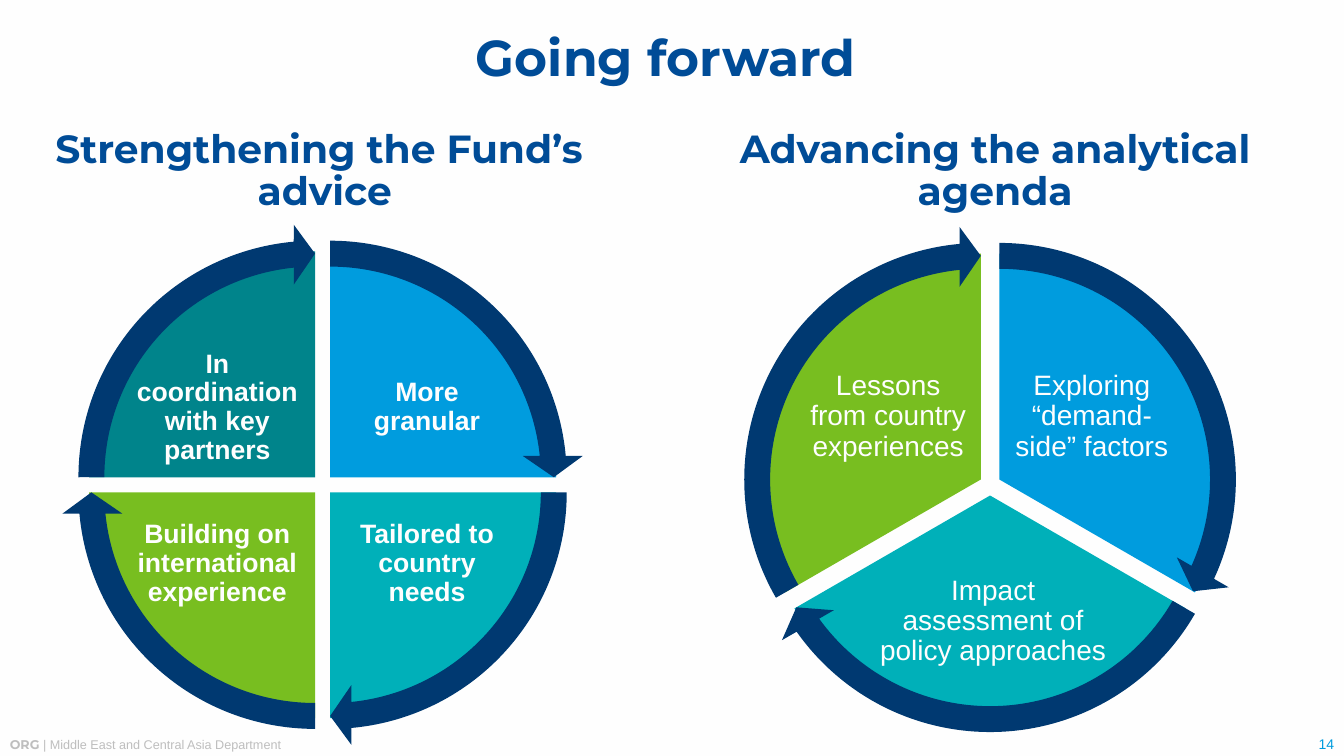
"""Build the 'Going forward' slide with two segmented cycle wheels."""
import math
from dataclasses import dataclass

import pptx
import pptx.dml.color
import pptx.enum.shapes
import pptx.enum.text
import pptx.shapes.autoshape
import pptx.shapes.shapetree
import pptx.slide
import pptx.text.text
import pptx.util

Inches = pptx.util.Inches
RGBColor = pptx.dml.color.RGBColor
Preset = pptx.enum.shapes.MSO_SHAPE
Align = pptx.enum.text.PP_ALIGN
Anchor = pptx.enum.text.MSO_ANCHOR

WHITE = RGBColor(0xFE, 0xFE, 0xFE)
NAVY = RGBColor(0x00, 0x39, 0x71)
HEADING_BLUE = RGBColor(0x00, 0x4C, 0x97)
SKY = RGBColor(0x00, 0x9C, 0xDE)
TURQUOISE = RGBColor(0x00, 0xB0, 0xB9)
GREEN = RGBColor(0x78, 0xBE, 0x20)
TEAL = RGBColor(0x00, 0x84, 0x8B)
GREY = RGBColor(0xBE, 0xBE, 0xBE)

PIE_SIZE = 4.48
ARROW_SIZE = 5.03
SEGMENT_OFFSET = 0.106
UNITS_PER_DEGREE = 0.6
ARROWHEAD_ANGLE = 3.275
LABEL_INSET = 0.01


@dataclass(frozen=True)
class Box:
    left: float
    top: float
    width: float
    height: float

    def lengths(self) -> list[pptx.util.Length]:
        return [Inches(v) for v in (self.left, self.top, self.width, self.height)]


@dataclass(frozen=True)
class Style:
    size: float
    color: RGBColor
    font: str = "Arial"
    bold: bool = False
    align: Align = Align.CENTER
    line_spacing: float = 0.9


@dataclass(frozen=True)
class Segment:
    text: str
    color: RGBColor
    label: Box


@dataclass(frozen=True)
class Wheel:
    center_x: float
    center_y: float
    label_style: Style
    segments: tuple[Segment, ...]


HEADING = Style(28, HEADING_BLUE, "Montserrat", True)
TITLE = Style(36, HEADING_BLUE, "Montserrat", True)
FOOTER = Style(9, GREY, align=Align.LEFT, line_spacing=1)
PAGE_NUMBER = Style(10, SKY, align=Align.RIGHT, line_spacing=1)

WHEELS = (
    Wheel(3.2, 4.81, Style(19, WHITE, bold=True), (
        Segment("More granular", SKY, Box(3.41, 3.43, 1.65, 1.23)),
        Segment("Tailored to country needs", TURQUOISE, Box(3.41, 4.98, 1.65, 1.23)),
        Segment("Building on international experience", GREEN, Box(1.33, 4.98, 1.65, 1.23)),
        Segment("In coordination with key partners", TEAL, Box(1.33, 3.43, 1.65, 1.23)),
    )),
    Wheel(9.82, 4.81, Style(20, WHITE), (
        Segment("Exploring “demand-side” factors", SKY, Box(10.03, 3.47, 1.6, 1.33)),
        Segment("Impact assessment of policy approaches", TURQUOISE, Box(8.65, 5.58, 2.4, 1.17)),
        Segment("Lessons from country experiences", GREEN, Box(8.01, 3.47, 1.6, 1.33)),
    )),
)


def write(frame: pptx.text.text.TextFrame, text: str, style: Style,
          inset_x: float = 0, inset_y: float = 0, anchor: Anchor = Anchor.MIDDLE) -> None:
    frame.text = text
    frame.word_wrap = True
    frame.auto_size = pptx.enum.text.MSO_AUTO_SIZE.NONE
    frame.vertical_anchor = anchor
    frame.margin_left = frame.margin_right = Inches(inset_x)
    frame.margin_top = frame.margin_bottom = Inches(inset_y)
    for paragraph in frame.paragraphs:
        paragraph.alignment = style.align
        paragraph.line_spacing = style.line_spacing
        for run in paragraph.runs:
            run.font.size = pptx.util.Pt(style.size)
            run.font.name = style.font
            run.font.bold = style.bold
            run.font.color.rgb = style.color


def add_sector(shapes: pptx.shapes.shapetree.GroupShapes, preset: Preset, center: tuple[float, float],
               size: float, color: RGBColor, adjustments: list[float]) -> None:
    box = Box(center[0] - size / 2, center[1] - size / 2, size, size)
    sector = shapes.add_shape(preset, *box.lengths())
    for index, value in enumerate(adjustments):
        sector.adjustments[index] = value
    sector.fill.solid()
    sector.fill.fore_color.rgb = color
    sector.line.fill.background()
    sector.shadow.inherit = False


def add_wheel(slide: pptx.slide.Slide, wheel: Wheel) -> None:
    shapes = slide.shapes.add_group_shape().shapes
    sweep = 360 / len(wheel.segments)
    arrows = []
    for index, segment in enumerate(wheel.segments):
        start_angle = 270 + index * sweep
        bisector = math.radians(start_angle + sweep / 2)
        center = (wheel.center_x + SEGMENT_OFFSET * math.cos(bisector),
                  wheel.center_y + SEGMENT_OFFSET * math.sin(bisector))
        start = start_angle % 360 * UNITS_PER_DEGREE
        end = (start_angle + sweep) % 360 * UNITS_PER_DEGREE
        add_sector(shapes, Preset.PIE, center, PIE_SIZE, segment.color, [start, end])
        label = shapes.add_textbox(*segment.label.lengths())
        write(label.text_frame, segment.text, wheel.label_style, LABEL_INSET, LABEL_INSET)
        tip = (end - ARROWHEAD_ANGLE) % (360 * UNITS_PER_DEGREE)
        arrows.append((center, [0.051, ARROWHEAD_ANGLE, tip, start, 0.059]))
    for center, adjustments in arrows:
        add_sector(shapes, Preset.CIRCULAR_ARROW, center, ARROW_SIZE, NAVY, adjustments)


def add_footer(slide: pptx.slide.Slide) -> None:
    department = slide.shapes.add_textbox(*Box(0, 7.26, 10, 0.25).lengths())
    write(department.text_frame, "ORG ", FOOTER, 0.1, 0.05, Anchor.TOP)
    organisation = department.text_frame.paragraphs[0].runs[0]
    organisation.font.name = "Montserrat"
    organisation.font.bold = True
    name = department.text_frame.paragraphs[0].add_run()
    name.text = "| Middle East and Central Asia Department"
    name.font.size = pptx.util.Pt(FOOTER.size)
    name.font.name = FOOTER.font
    name.font.color.rgb = FOOTER.color
    page = slide.shapes.add_textbox(*Box(12.01, 7.24, 1.32, 0.27).lengths())
    write(page.text_frame, "14", PAGE_NUMBER, 0.1, 0.05, Anchor.BOTTOM)


def main() -> None:
    deck = pptx.Presentation()
    deck.slide_width, deck.slide_height = Inches(13.33), Inches(7.5)
    slide = deck.slides.add_slide(deck.slide_layouts[5])
    slide.background.fill.solid()
    slide.background.fill.fore_color.rgb = WHITE

    title = slide.shapes.title
    title.left, title.top, title.width, title.height = Box(0.48, 0.24, 12.25, 0.71).lengths()
    write(title.text_frame, "Going forward", TITLE)

    add_footer(slide)
    for left, heading in ((0.23, "Strengthening the Fund’s \nadvice"),
                          (6.88, "Advancing the analytical agenda")):
        box = slide.shapes.add_textbox(*Box(left, 1.24, 5.98, 0.93).lengths())
        write(box.text_frame, heading, HEADING)
    for wheel in WHEELS:
        add_wheel(slide, wheel)
    deck.save("out.pptx")


if __name__ == "__main__":
    main()
